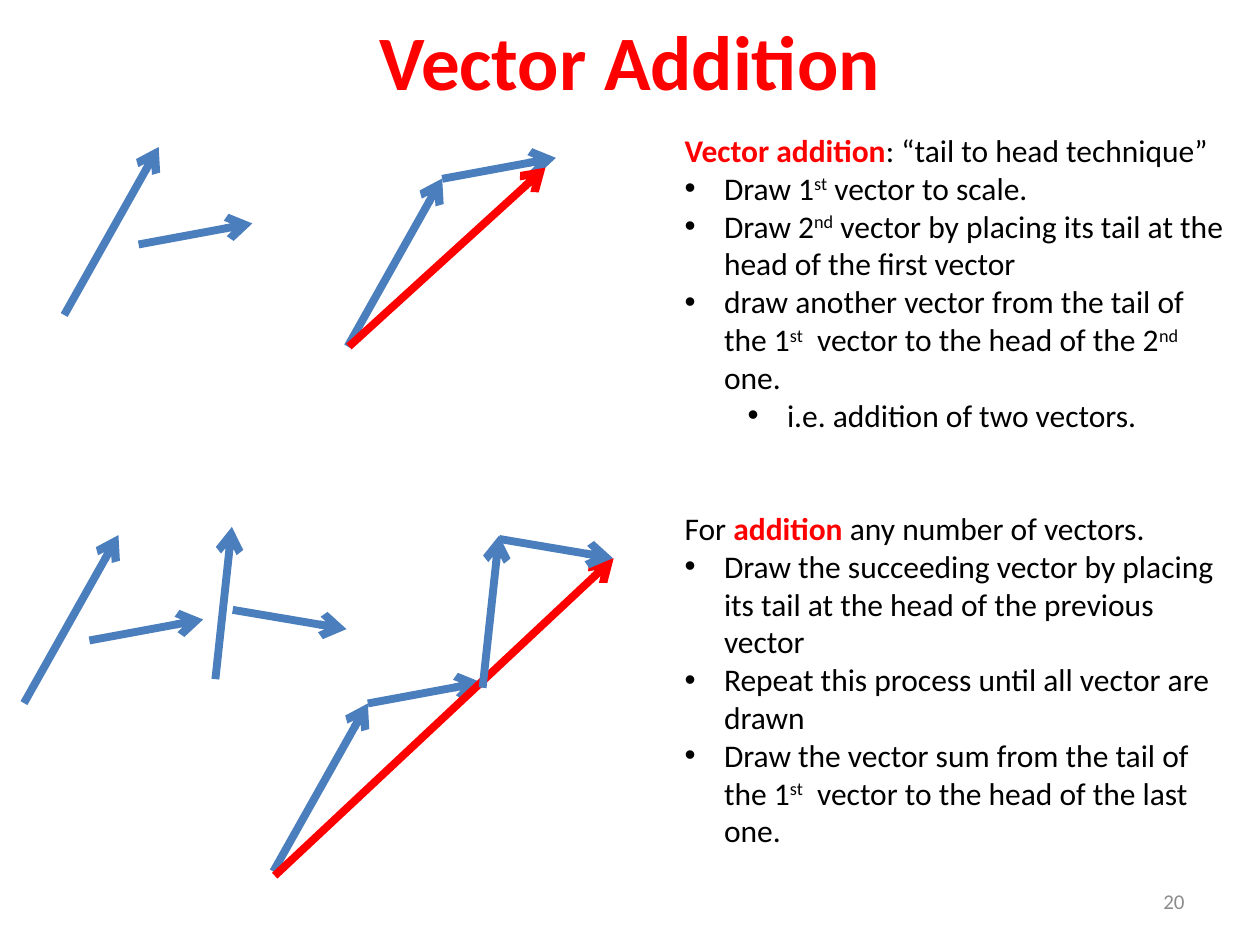
"""Build a slide on adding vectors tail to head."""
from lxml.etree import SubElement
from pptx import Presentation
from pptx.dml.color import RGBColor
from pptx.enum.shapes import MSO_CONNECTOR
from pptx.enum.text import MSO_ANCHOR, MSO_AUTO_SIZE, PP_ALIGN
from pptx.oxml.ns import qn
from pptx.util import Pt

RED = RGBColor(0xFF, 0x00, 0x00)
BLUE = RGBColor(0x4B, 0x7E, 0xBC)
BLACK = RGBColor(0x00, 0x00, 0x00)
GRAY = RGBColor(0x8C, 0x8C, 0x8C)
HANG = 22.5


def place(sp, left, top, width, height):
    sp.left, sp.top, sp.width, sp.height = Pt(left), Pt(top), Pt(width), Pt(height)


def style(r, size, color, bold=False):
    r.font.name, r.font.size, r.font.bold = "Calibri", Pt(size), bold
    r.font.color.rgb = color


prs = Presentation()
prs.slide_width, prs.slide_height = Pt(720), Pt(540)
s = prs.slides.add_slide(prs.slide_layouts[1])

title = s.shapes.title
place(title, 36, 6, 648, 56)
title.text_frame.text = "Vector Addition"
title.text_frame.vertical_anchor = MSO_ANCHOR.MIDDLE
title.text_frame.auto_size = MSO_AUTO_SIZE.NONE
p = title.text_frame.paragraphs[0]
p.alignment = PP_ALIGN.CENTER
style(p.runs[0], 44, RED, True)

number = s.shapes.add_textbox(Pt(516), Pt(500.5), Pt(168), Pt(28.75))
tf = number.text_frame
tf.word_wrap = True
tf.vertical_anchor = MSO_ANCHOR.MIDDLE
tf.text = "20"
tf.paragraphs[0].alignment = PP_ALIGN.RIGHT
style(tf.paragraphs[0].runs[0], 12, GRAY)

HEADING, BULLET, SUB_BULLET = None, 0, 1
steps = [
    (HEADING, 0, [("Vector addition", "key"), (": “tail to head technique”", "")]),
    (BULLET, 0, [("Draw 1", ""), ("st", "super"), (" vector to scale.", "")]),
    (BULLET, 0, [("Draw 2", ""), ("nd", "super"),
                 (" vector by placing its tail at the head of the first vector", "")]),
    (BULLET, 0, [("draw another vector from the tail of the 1", ""), ("st", "super"),
                 ("  vector to the head of the 2", ""), ("nd", "super"), (" one.", "")]),
    (SUB_BULLET, 0, [("i.e. addition of two vectors.", "")]),
    (HEADING, 43.2, [("For ", ""), ("addition", "key"), (" any number of vectors.", "")]),
    (BULLET, 0, [("Draw the succeeding vector by placing its tail at the head of the "
                  "previous vector", "")]),
    (BULLET, 0, [("Repeat this process until all vector are drawn", "")]),
    (BULLET, 0, [("Draw the vector sum from the tail of the 1", ""), ("st", "super"),
                 ("  vector to the head of the last one.", "")]),
]

body = s.placeholders[1]
place(body, 384, 71.3, 324, 422)
tf = body.text_frame
tf.word_wrap = True
tf.auto_size = MSO_AUTO_SIZE.NONE
tf.vertical_anchor = MSO_ANCHOR.TOP
for i, (level, gap, runs) in enumerate(steps):
    p = tf.paragraphs[0] if i == 0 else tf.add_paragraph()
    p.level = level or 0
    p.alignment = PP_ALIGN.LEFT
    p.space_before, p.space_after = Pt(gap), Pt(0)
    pPr = p._p.get_or_add_pPr()
    if level is HEADING:
        pPr.set("marL", "0")
        pPr.set("indent", "0")
        SubElement(pPr, qn("a:buNone"))
    else:
        pPr.set("marL", str(Pt(HANG + 36 * level)))
        pPr.set("indent", str(-Pt(HANG)))
        SubElement(pPr, qn("a:buFont"), typeface="Arial")
        SubElement(pPr, qn("a:buChar"), char="•")
    for text, kind in runs:
        r = p.add_run()
        r.text = text
        style(r, 18, RED if kind == "key" else BLACK, kind == "key")
        if kind == "super":
            r.font._element.set("baseline", "30000")

STEEP, SHALLOW, UPRIGHT, FALLING = (54, -96), (65, -12), (9.4, -87), (65, 11)
SUM_OF_TWO, SUM_OF_FOUR = (112.3, -102.2), (193.7, -181.4)
vectors = [
    (36.7, 180, STEEP, BLUE),
    (198.7, 198, STEEP, BLUE),
    (252.7, 102.2, SHALLOW, BLUE),
    (199.4, 198, SUM_OF_TWO, RED),
    (13.7, 401.8, STEEP, BLUE),
    (51.1, 366, SHALLOW, BLUE),
    (123.1, 388.1, UPRIGHT, BLUE),
    (133, 348.5, FALLING, BLUE),
    (79.2, 139.7, SHALLOW, BLUE),
    (156.2, 498, STEEP, BLUE),
    (210.2, 402, SHALLOW, BLUE),
    (157, 500.4, SUM_OF_FOUR, RED),
    (275.8, 393, UPRIGHT, BLUE),
    (285.3, 308, FALLING, BLUE),
]
for x, y, (dx, dy), color in vectors:
    arrow = s.shapes.add_connector(MSO_CONNECTOR.STRAIGHT, Pt(x), Pt(y), Pt(x + dx), Pt(y + dy))
    arrow.line.color.rgb = color
    arrow.line.width = Pt(4.5)
    SubElement(arrow.line._get_or_add_ln(), qn("a:tailEnd"), type="arrow")
    SubElement(arrow._element.spPr, qn("a:effectLst"))

prs.save("out.pptx")
